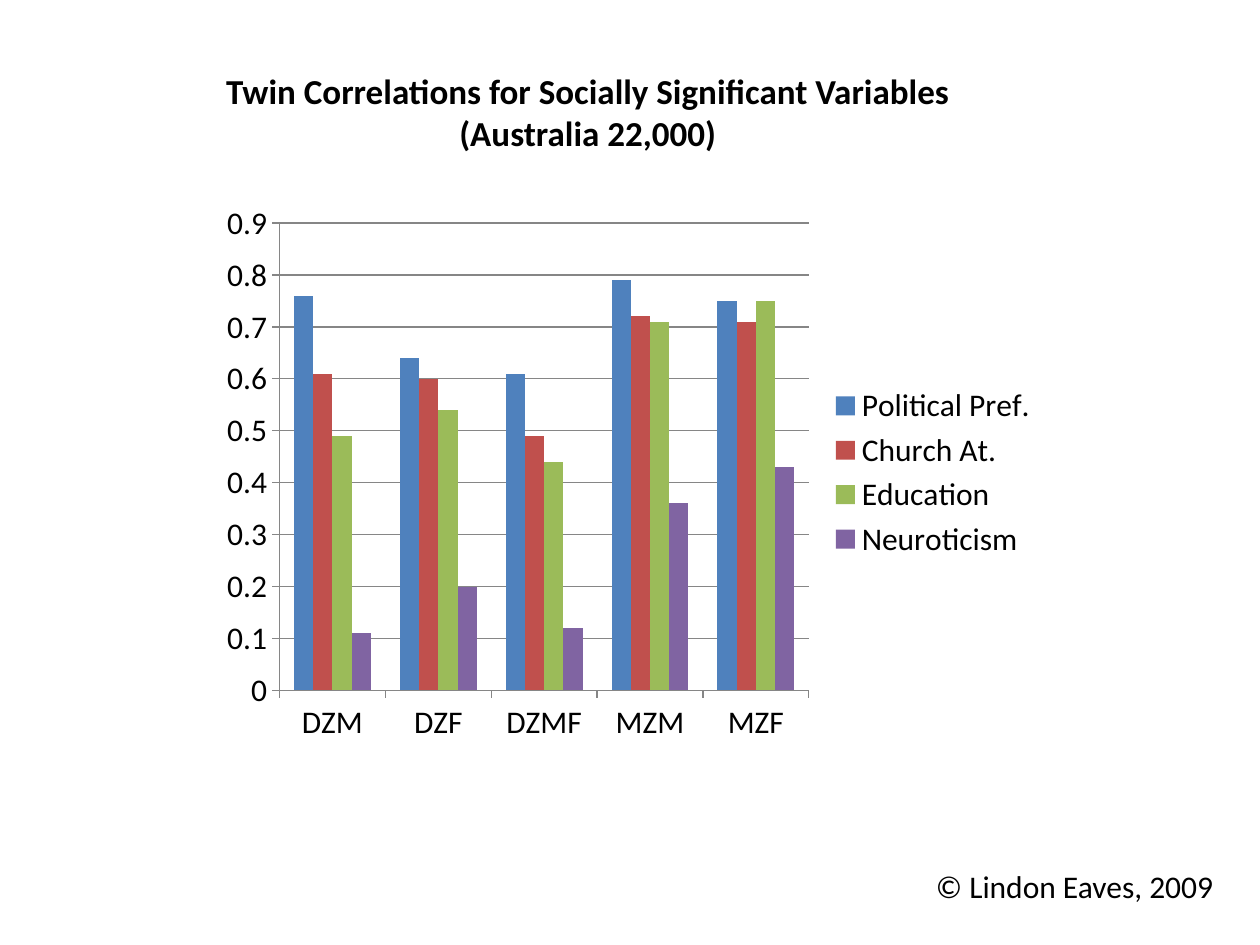
import pptx
import pptx.chart.data
import pptx.dml.color
import pptx.enum.chart
import pptx.enum.text
import pptx.util

Inches = pptx.util.Inches
Pt = pptx.util.Pt
RGBColor = pptx.dml.color.RGBColor

FONT = "Calibri"
BLACK = RGBColor(0x00, 0x00, 0x00)
GRAY = RGBColor(0x86, 0x86, 0x86)
BLUE = RGBColor(0x4F, 0x81, 0xBD)
RED = RGBColor(0xC0, 0x50, 0x4D)
GREEN = RGBColor(0x9B, 0xBB, 0x59)
PURPLE = RGBColor(0x80, 0x64, 0xA2)

TWIN_GROUPS = ["DZM", "DZF", "DZMF", "MZM", "MZF"]
CORRELATIONS = [
    ("Political Pref.", BLUE, [0.76, 0.64, 0.61, 0.79, 0.75]),
    ("Church At.", RED, [0.61, 0.6, 0.49, 0.72, 0.71]),
    ("Education", GREEN, [0.49, 0.54, 0.44, 0.71, 0.75]),
    ("Neuroticism", PURPLE, [0.11, 0.2, 0.12, 0.36, 0.43]),
]


def style_font(font, size, bold=False):
    font.name = FONT
    font.size = Pt(size)
    font.bold = bold
    font.color.rgb = BLACK


def add_text(page, area, text, size=18, bold=False,
             align=pptx.enum.text.PP_ALIGN.LEFT):
    """Place one paragraph per line of text in the given area."""
    box = page.shapes.add_textbox(*map(Inches, area))
    frame = box.text_frame
    frame.word_wrap = False
    frame.auto_size = pptx.enum.text.MSO_AUTO_SIZE.SHAPE_TO_FIT_TEXT
    frame.text = text
    for para in frame.paragraphs:
        para.alignment = align
        for span in para.runs:
            style_font(span.font, size, bold)
    return box


def add_correlation_chart(page, area):
    data = pptx.chart.data.CategoryChartData()
    data.categories = TWIN_GROUPS
    for name, _, values in CORRELATIONS:
        data.add_series(name, values)
    chart = page.shapes.add_chart(
        pptx.enum.chart.XL_CHART_TYPE.COLUMN_CLUSTERED,
        *map(Inches, area), data).chart
    chart.has_title = False
    style_font(chart.font, 18)

    # Columns
    plot = chart.plots[0]
    plot.gap_width = 150
    plot.overlap = 0
    plot.vary_by_categories = False
    for series, (_, color, _) in zip(plot.series, CORRELATIONS):
        series.format.fill.solid()
        series.format.fill.fore_color.rgb = color

    # Axes and gridlines
    for axis in (chart.category_axis, chart.value_axis):
        axis.major_tick_mark = pptx.enum.chart.XL_TICK_MARK.OUTSIDE
        axis.minor_tick_mark = pptx.enum.chart.XL_TICK_MARK.NONE
        axis.format.line.color.rgb = GRAY
        axis.format.line.width = Pt(0.75)
    values_axis = chart.value_axis
    values_axis.minimum_scale = 0
    values_axis.maximum_scale = 0.9
    values_axis.major_unit = 0.1
    values_axis.tick_labels.number_format = "General"
    values_axis.tick_labels.number_format_is_linked = False
    values_axis.has_major_gridlines = True
    grid_line = values_axis.major_gridlines.format.line
    grid_line.color.rgb = GRAY
    grid_line.width = Pt(0.75)

    # Legend
    chart.has_legend = True
    chart.legend.position = pptx.enum.chart.XL_LEGEND_POSITION.RIGHT
    chart.legend.include_in_layout = False
    return chart


def main():
    deck = pptx.Presentation()
    deck.slide_width = Inches(10)
    deck.slide_height = Inches(7.5)
    page = deck.slides.add_slide(deck.slide_layouts[6])

    add_correlation_chart(page, (1.67, 1.53, 6.67, 4.44))
    add_text(page, (1.67, 0.5, 5.99, 0.77),
             "Twin Correlations for Socially Significant Variables\n"
             "(Australia 22,000)",
             size=20, bold=True, align=pptx.enum.text.PP_ALIGN.CENTER)
    add_text(page, (7.33, 6.83, 2.43, 0.4), "© Lindon Eaves, 2009")

    deck.save("out.pptx")


if __name__ == "__main__":
    main()
